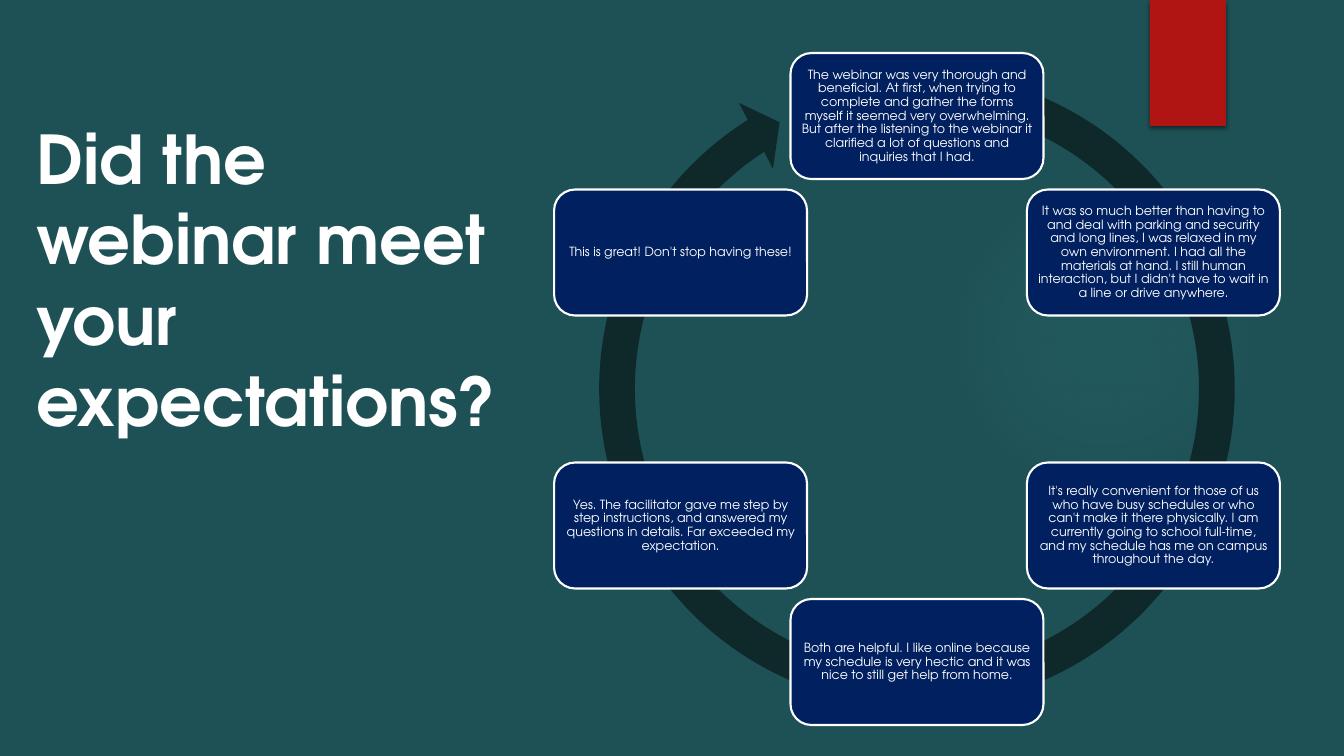
from math import cos, radians, sin

from lxml.etree import SubElement
from pptx import Presentation
from pptx.dml.color import RGBColor
from pptx.enum.shapes import MSO_SHAPE
from pptx.enum.text import MSO_ANCHOR, MSO_AUTO_SIZE, PP_ALIGN
from pptx.oxml import parse_xml
from pptx.oxml.ns import nsdecls, qn
from pptx.util import Pt

PX = 914400 / 100.8
FONT = "TeX Gyre Adventor"
RING_X, RING_Y, RING_RADIUS = 917, 389, 273
BOX_WIDTH, BOX_HEIGHT, BOX_INSET = 253, 126, 10

# Clockwise from the top of the ring
COMMENTS = [
    "The webinar was very thorough and beneficial. At first, when trying to complete and "
    "gather the forms myself it seemed very overwhelming. But after the listening to the "
    "webinar it clarified a lot of questions and inquiries that I had.",
    "It was so much better than having to and deal with parking and security and long lines, "
    "I was relaxed in my own environment. I had all the materials at hand. I still human "
    "interaction, but I didn't have to wait in a line or drive anywhere.",
    "It's really convenient for those of us who have busy schedules or who can't make it "
    "there physically. I am currently going to school full-time, and my schedule has me on "
    "campus throughout the day.",
    "Both are helpful. I like online because my schedule is very hectic and it was nice to "
    "still get help from home.",
    "Yes. The facilitator gave me step by step instructions, and answered my questions in "
    "details. Far exceeded my expectation.",
    "This is great! Don't stop having these!",
]


def paint(target, color):
    """Give a fill, or the colour of a font or line, a solid hex colour."""
    if hasattr(target, "solid"):
        target.solid()
        target = target.fore_color
    target.rgb = RGBColor.from_string(color)


def add_plain_shape(kind, left, top, width, height, color):
    """Add a filled shape without outline or shadow, placed in px."""
    shape = page.shapes.add_shape(kind, *(round(n * PX) for n in (left, top, width, height)))
    shape.shadow.inherit = False
    shape.line.fill.background()
    paint(shape.fill, color)
    return shape


deck = Presentation()
deck.slide_width, deck.slide_height = round(1344 * PX), round(756 * PX)
page = deck.slides.add_slide(deck.slide_layouts[5])
paint(page.background.fill, "1E5155")

# Soft glow and red tab
glow = add_plain_shape(MSO_SHAPE.OVAL, 949, 184, 310, 310, "50B9C1")
stops = "".join(
    f'<a:gs pos="{position * 1000}"><a:srgbClr val="50B9C1">'
    f'<a:alpha val="{alpha * 1000}"/></a:srgbClr></a:gs>'
    for position, alpha in [(0, 7), (36, 6), (69, 0)]
)
gradient = parse_xml(
    f'<a:gradFill {nsdecls("a")} rotWithShape="1"><a:gsLst>{stops}</a:gsLst><a:path path="circle">'
    '<a:fillToRect l="50000" t="50000" r="50000" b="50000"/></a:path></a:gradFill>'
)
solid_fill = glow.element.spPr.find(qn("a:solidFill"))
solid_fill.getparent().replace(solid_fill, gradient)

tab = add_plain_shape(MSO_SHAPE.RECTANGLE, 1150, 0, 76, 126, "B01513")
shadow = SubElement(
    tab.element.spPr.find(qn("a:effectLst")), qn("a:outerShdw"),
    blurRad=str(Pt(3)), dist=str(Pt(2)), dir="5400000", rotWithShape="0",
)
shadow_color = SubElement(shadow, qn("a:srgbClr"), val="000000")
SubElement(shadow_color, qn("a:alpha"), val="45000")

# Title
title = page.shapes.title
title.left, title.top, title.width, title.height = (round(n * PX) for n in (26, 112, 489, 528))
frame = title.text_frame
frame.word_wrap = True
frame.auto_size = MSO_AUTO_SIZE.NONE
frame.vertical_anchor = MSO_ANCHOR.TOP
para = frame.paragraphs[0]
para.alignment = PP_ALIGN.LEFT
span = para.add_run()
span.text = "Did the webinar meet your expectations?"
span.font.name, span.font.size, span.font.bold = FONT, Pt(48), True
paint(span.font.color, "FFFFFF")

# Ring of comments
ring = add_plain_shape(MSO_SHAPE.CIRCULAR_ARROW, RING_X - 337, RING_Y - 337, 674, 674, "0F282A")
for index, value in enumerate([0.053, 3.126, 142.524, 171.128, 0.055]):
    ring.adjustments[index] = value

for index, comment in enumerate(COMMENTS):
    angle = radians(index * 360 / len(COMMENTS))
    left = RING_X + RING_RADIUS * sin(angle) - BOX_WIDTH / 2
    top = RING_Y - RING_RADIUS * cos(angle) - BOX_HEIGHT / 2
    box = add_plain_shape(
        MSO_SHAPE.ROUNDED_RECTANGLE, left, top, BOX_WIDTH, BOX_HEIGHT, "002060"
    )
    paint(box.line.fill, "FFFFFF")
    box.line.width = Pt(1.5)
    frame = box.text_frame
    frame.word_wrap = True
    frame.vertical_anchor = MSO_ANCHOR.MIDDLE
    # The rounded corners already inset the text by about 6 px
    frame.margin_left = frame.margin_right = round((BOX_INSET - 6) * PX)
    frame.margin_top = frame.margin_bottom = round((BOX_INSET - 6) * PX)
    para = frame.paragraphs[0]
    para.alignment = PP_ALIGN.CENTER
    para.line_spacing = 0.9
    span = para.add_run()
    span.text = comment
    span.font.name, span.font.size = FONT, Pt(9)
    paint(span.font.color, "FFFFFF")

deck.save("out.pptx")
